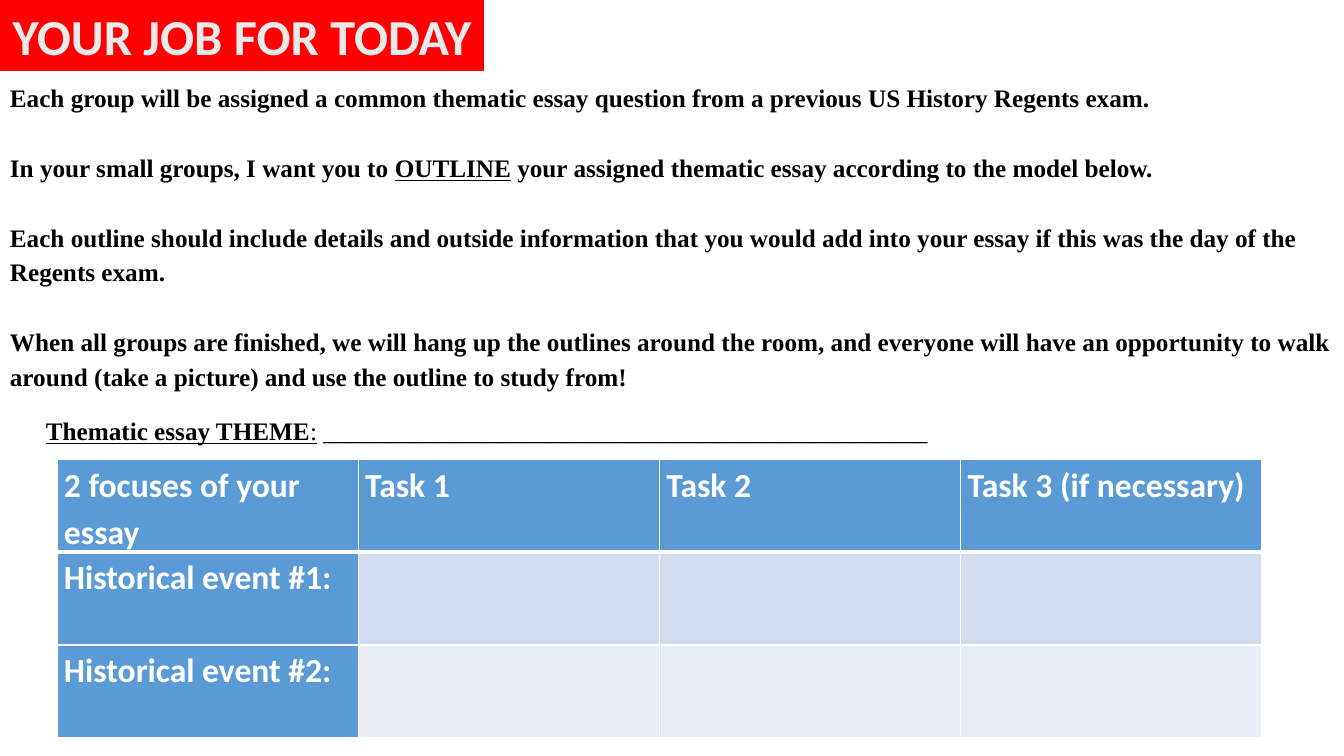
from dataclasses import dataclass

from lxml import etree
from pptx import Presentation
from pptx.dml.color import RGBColor
from pptx.enum.text import MSO_ANCHOR, MSO_AUTO_SIZE, PP_ALIGN
from pptx.oxml.ns import qn
from pptx.util import Emu, Pt

TOP, MIDDLE = MSO_ANCHOR.TOP, MSO_ANCHOR.MIDDLE
CENTER = PP_ALIGN.CENTER
NO_FIT = MSO_AUTO_SIZE.NONE
TITLE_ONLY = 5
EMU_PER_PX = 914400 / 100.8


@dataclass(frozen=True)
class Theme:
    """Colours, fonts and type sizes of the slide."""
    banner: str = "FF0000"
    banner_text: str = "EBEAEA"
    banner_outline: str = "3A5274"
    ink: str = "000000"
    white: str = "FFFFFF"
    header: str = "5B9BD5"
    bands: tuple = ("D2DEEF", "EAEFF7")
    heading_font: str = "Calibri"
    body_font: str = "Times New Roman"
    title_size: int = 36
    body_size: int = 18
    table_size: int = 24
    line_spacing: float = 1.15
    paragraph_gap: int = 25


THEME = Theme()

INSTRUCTIONS = [
    [("Each group will be assigned a common thematic essay question from a previous "
      "US History Regents exam.", True, False)],
    [("In your small groups, I want you to ", True, False),
     ("OUTLINE", True, True),
     (" your assigned thematic essay according to the model below.", True, False)],
    [("Each outline should include details and outside information that you would add "
      "into your essay if this was the day of the Regents exam.", True, False)],
    [("When all groups are finished, we will hang up the outlines around the room, and "
      "everyone will have an opportunity to walk around (take a picture) and use the "
      "outline to study from!", True, False)],
]
THEME_LINE = [[
    ("Thematic essay THEME", True, True),
    (":", False, True),
    (" " + "_" * 48, False, False),
]]
OUTLINE_ROWS = [
    ["2 focuses of your essay", "Task 1", "Task 2", "Task 3 (if necessary)"],
    ["Historical event #1:", "", "", ""],
    ["Historical event #2:", "", "", ""],
]


def px(length):
    """Turn pixels into EMU."""
    return Emu(round(length * EMU_PER_PX))


def style_span(span, font, size, color, bold=True, underline=False):
    """Format one run of text."""
    span.font.name = font
    span.font.size = Pt(size)
    span.font.bold = bold
    span.font.underline = underline
    span.font.color.rgb = RGBColor.from_string(color)


def make_line(parent, tag, color, width):
    """Append a solid line of the given tag to an XML parent."""
    line = etree.SubElement(parent, qn(tag), w=str(Pt(width)))
    fill = etree.SubElement(line, qn("a:solidFill"))
    etree.SubElement(fill, qn("a:srgbClr"), val=color)
    return line


def add_banner(page, box):
    """Place the title as a red banner."""
    title = page.shapes.title
    title.left, title.top, title.width, title.height = map(px, box)
    title.fill.solid()
    title.fill.fore_color.rgb = RGBColor.from_string(THEME.banner)
    frame = title.text_frame
    frame.text = "YOUR JOB FOR TODAY"
    frame.word_wrap = False
    frame.auto_size = NO_FIT
    frame.vertical_anchor = MIDDLE
    para = frame.paragraphs[0]
    para.alignment = CENTER
    span = para.runs[0]
    style_span(span, THEME.heading_font, THEME.title_size, THEME.banner_text)
    properties = span.font._element
    properties.insert(0, make_line(properties, "a:ln", THEME.banner_outline, 1))


def add_body_text(page, box, paragraphs):
    """Place serif paragraphs made of (text, bold, underline) spans."""
    frame = page.shapes.add_textbox(*map(px, box)).text_frame
    frame.word_wrap = True
    for index, parts in enumerate(paragraphs):
        para = frame.add_paragraph() if index else frame.paragraphs[0]
        para.line_spacing = THEME.line_spacing
        if index < len(paragraphs) - 1:
            para.space_after = Pt(THEME.paragraph_gap)
        for text, bold, underline in parts:
            span = para.add_run()
            span.text = text
            style_span(span, THEME.body_font, THEME.body_size, THEME.ink, bold, underline)


def style_cell(cell, text, fill, bottom_width):
    """Fill one table cell with its text, borders and colour."""
    cell.margin_left = cell.margin_right = px(7)
    cell.margin_top = cell.margin_bottom = 0
    cell.vertical_anchor = TOP
    cell.text = text
    para = cell.text_frame.paragraphs[0]
    para.line_spacing = THEME.line_spacing
    for span in para.runs:
        style_span(span, THEME.heading_font, THEME.table_size, THEME.white)
    properties = cell._tc.get_or_add_tcPr()
    for side, width in (("L", 1), ("R", 1), ("T", 1), ("B", bottom_width)):
        make_line(properties, f"a:ln{side}", THEME.white, width)
    cell.fill.solid()
    cell.fill.fore_color.rgb = RGBColor.from_string(fill)


def add_outline_table(page, box):
    """Place the essay outline grid with equal rows and columns."""
    rows, columns = len(OUTLINE_ROWS), len(OUTLINE_ROWS[0])
    table = page.shapes.add_table(rows, columns, *map(px, box)).table
    for row_index, texts in enumerate(OUTLINE_ROWS):
        for column_index, text in enumerate(texts):
            is_header = row_index == 0 or column_index == 0
            fill = THEME.header if is_header else THEME.bands[row_index - 1]
            bottom_width = 3 if row_index == 0 else 1
            style_cell(table.cell(row_index, column_index), text, fill, bottom_width)


def build_job_slide(deck):
    """Add the slide with the banner, instructions and outline model."""
    page = deck.slides.add_slide(deck.slide_layouts[TITLE_ONLY])
    add_banner(page, (0, 0, 484, 71))
    add_body_text(page, (0, 73, 1344, 327), INSTRUCTIONS)
    add_outline_table(page, (57, 459, 1205, 279))
    add_body_text(page, (36, 406, 1245, 45), THEME_LINE)


def main():
    """Build and save the deck."""
    deck = Presentation()
    deck.slide_width, deck.slide_height = px(1344), px(756)
    build_job_slide(deck)
    deck.save("out.pptx")


if __name__ == "__main__":
    main()
